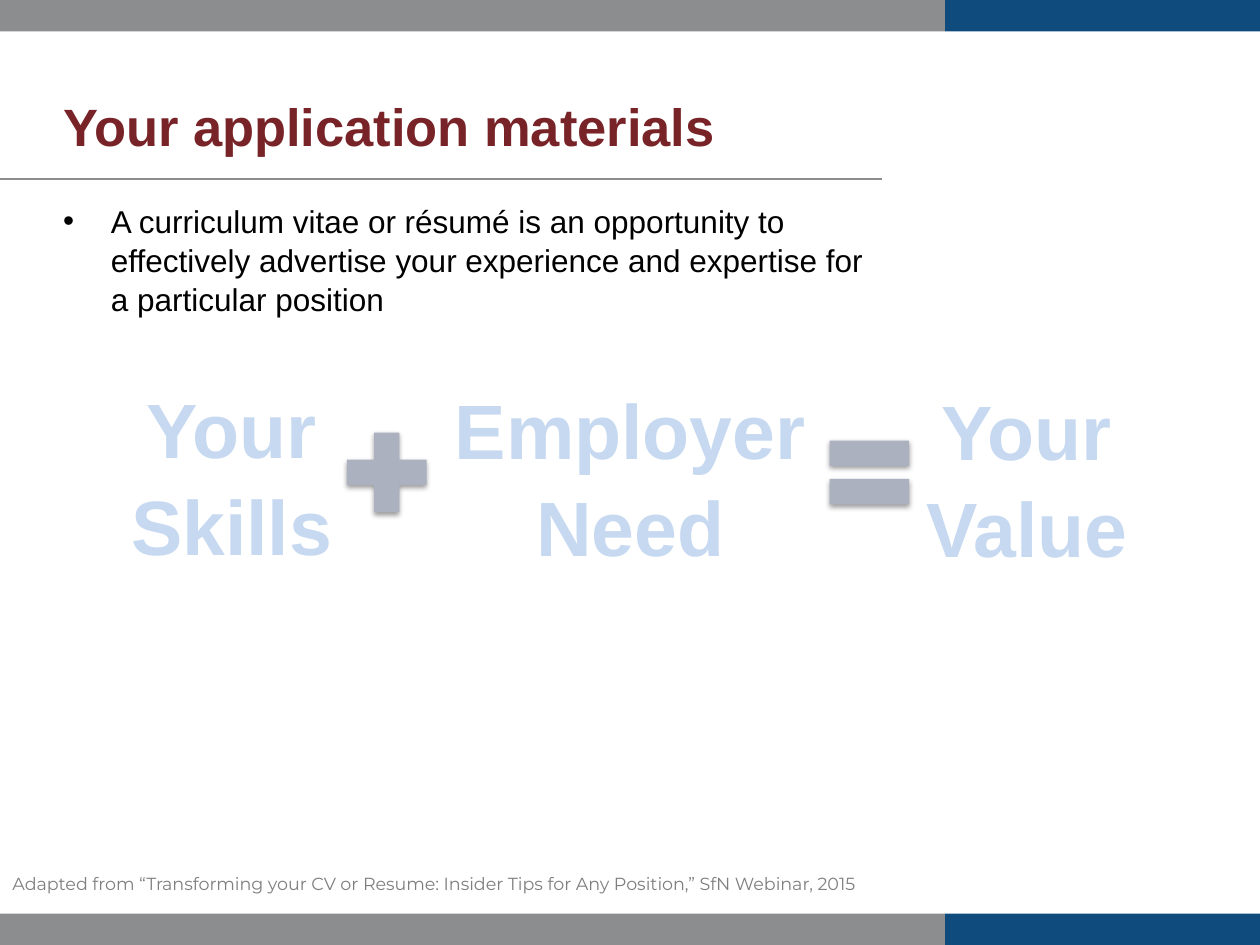
from lxml.etree import SubElement as Sub
from pptx import Presentation
from pptx.dml.color import RGBColor as RGB
from pptx.enum.shapes import MSO_CONNECTOR as Conn, MSO_SHAPE as Shape
from pptx.enum.text import MSO_ANCHOR as Anchor, MSO_AUTO_SIZE as Fit, PP_ALIGN as Align
from pptx.oxml.ns import qn
from pptx.util import Pt

PX = 9144
BLUE = RGB(0x10, 0x4B, 0x7D)
GREY = RGB(0x8C, 0x8D, 0x8E)
RED = RGB(0x78, 0x23, 0x27)
BLACK = RGB(0, 0, 0)
NOTE = RGB(0x7F, 0x7F, 0x7F)
SIGN = RGB(0xAC, 0xB1, 0xBF)
PALE = RGB(0xC6, 0xD9, 0xF1)


class Deck:
    """Holds the style and the current slide."""

    def __init__(self, wide, high):
        self.prs = Presentation()
        self.prs.slide_width, self.prs.slide_height = wide * PX, high * PX
        self.slide = self.prs.slides.add_slide(self.prs.slide_layouts[5])
        self.shapes = self.slide.shapes

    def label(self, box, text, size, color, bold=False, font="Arial",
              align=Align.LEFT, pad=(0, 0), lead=1.0, hang=0):
        frame = box.text_frame
        frame.word_wrap, frame.auto_size = True, Fit.NONE
        frame.margin_left = frame.margin_right = pad[0] * PX
        frame.margin_top = frame.margin_bottom = pad[1] * PX
        para = frame.paragraphs[0]
        para.text, para.alignment, para.line_spacing = text, align, lead
        if hang:
            props = para._p.get_or_add_pPr()
            props.set("marL", str(hang * PX))
            props.set("indent", str(-hang * PX))
            Sub(props, qn("a:buFont"), typeface="Arial")
            Sub(props, qn("a:buChar"), char="•")
        style = para.font
        style.name, style.size, style.bold = font, Pt(size), bold
        style.color.rgb = color

    def title(self, x, y, w, h, text, size, color):
        box = self.shapes.title
        box.left, box.top, box.width, box.height = (n * PX for n in (x, y, w, h))
        box.text_frame.vertical_anchor = Anchor.MIDDLE
        self.label(box, text, size, color, bold=True)

    def text(self, x, y, w, h, text, size, color, **style):
        box = self.shapes.add_textbox(x * PX, y * PX, w * PX, h * PX)
        self.label(box, text, size, color, **style)

    def shape(self, kind, x, y, w, h, color):
        item = self.shapes.add_shape(kind, x * PX, y * PX, w * PX, h * PX)
        item.shadow.inherit = False
        item.fill.solid()
        item.fill.fore_color.rgb = color
        item.line.fill.background()
        return item

    def sign(self, kind, x, y, side):
        item = self.shape(kind, x, y, side, side, SIGN)
        glow = Sub(item._element.spPr.find(qn("a:effectLst")), qn("a:outerShdw"),
                   blurRad=str(Pt(3.1)), dist=str(Pt(1.6)), dir="5400000",
                   rotWithShape="0")
        shade = Sub(glow, qn("a:srgbClr"), val="000000")
        Sub(shade, qn("a:alpha"), val="38000")

    def rule(self, x, y, end, color):
        line = self.shapes.add_connector(Conn.STRAIGHT, x * PX, y * PX, end * PX, y * PX)
        line.line.color.rgb, line.line.width = color, Pt(0.75)
        Sub(line._element.spPr, qn("a:effectLst"))


def main():
    deck = Deck(1000, 750)
    deck.rule(0, 142, 700, GREY)
    for y in (0, 725):
        deck.shape(Shape.RECTANGLE, 750, y, 250, 25, BLUE)
        deck.shape(Shape.RECTANGLE, 0, y, 750, 25, GREY)
    deck.title(50, 75, 750, 50, "Your application materials", 30, RED)
    deck.text(50, 159, 651, 467,
              "A curriculum vitae or résumé is an opportunity to effectively "
              "advertise your experience and expertise for a particular position",
              18, BLACK, lead=1.04, hang=38)
    deck.text(0, 683, 701, 36,
              "Adapted from “Transforming your CV or Resume: Insider Tips for "
              "Any Position,” SfN Webinar, 2015",
              10, NOTE, font="Montserrat", pad=(10, 10))
    for kind, x in ((Shape.MATH_PLUS, 264), (Shape.MATH_EQUAL, 647)):
        deck.sign(kind, x, 332, 86)
    for text, x, y, w in (("Your Skills", 81, 294, 206),
                          ("Employer Need", 344, 295, 313),
                          ("Your Value", 712, 296, 206)):
        deck.text(x, y, w, 158, text, 44, PALE, bold=True,
                  align=Align.CENTER, pad=(10, 5), lead=1.05)
    deck.prs.save("out.pptx")


if __name__ == "__main__":
    main()
